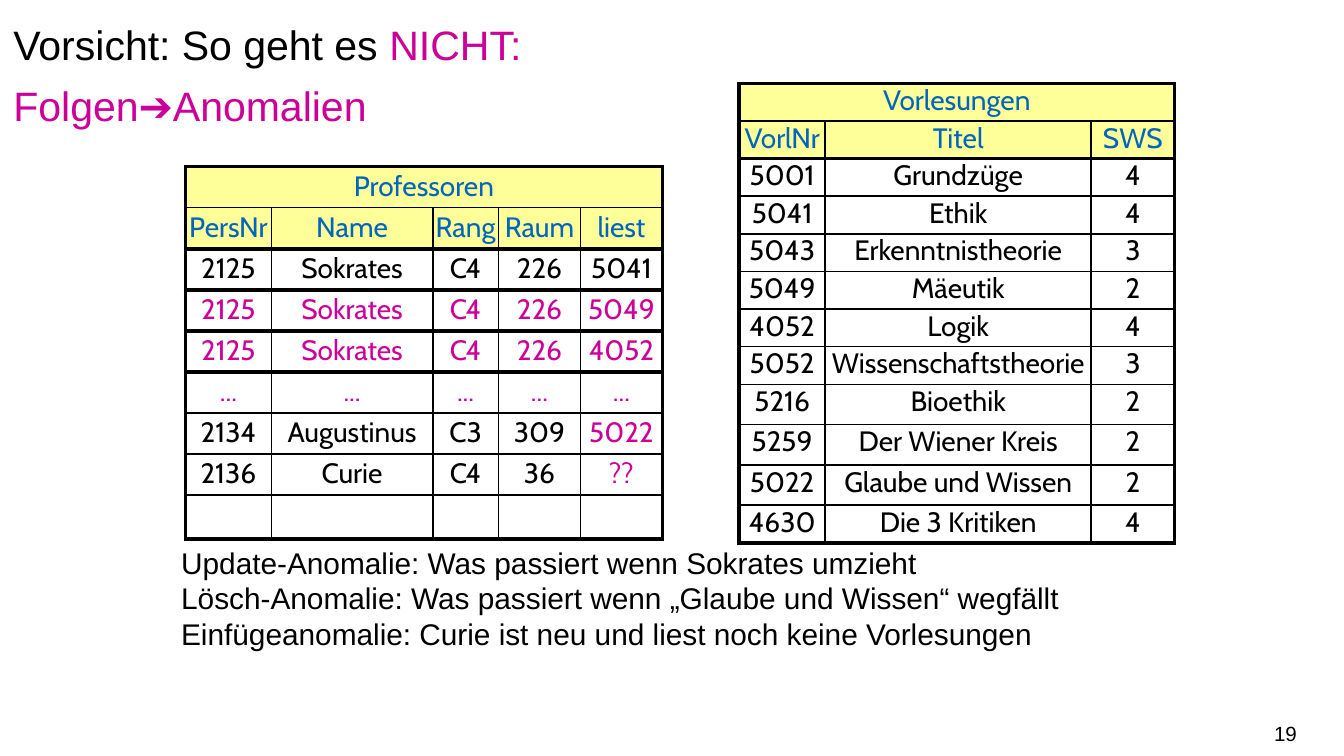
from lxml import etree
from pptx import Presentation
from pptx.dml.color import RGBColor
from pptx.enum.text import MSO_ANCHOR, MSO_AUTO_SIZE, PP_ALIGN
from pptx.oxml import parse_xml
from pptx.oxml.ns import nsdecls, qn
from pptx.util import Inches, Pt

TOP, MIDDLE = MSO_ANCHOR.TOP, MSO_ANCHOR.MIDDLE
LEFT, CENTER, RIGHT = PP_ALIGN.LEFT, PP_ALIGN.CENTER, PP_ALIGN.RIGHT
NO_AUTOFIT = MSO_AUTO_SIZE.NONE

BLACK = RGBColor(0x00, 0x00, 0x00)
MAGENTA = RGBColor(0xCC, 0x00, 0x99)
BLUE = RGBColor(0x00, 0x65, 0xBD)
YELLOW = RGBColor(0xFF, 0xFF, 0x99)

BODY_FONT, TABLE_FONT = "Arial", "Cabin"
TABLE_SIZE = 15
HEAVY, THIN = Pt(2.25), Pt(1)
HEADER_ROWS = 2

PROFESSORS = [
    ["Professoren"],
    ["PersNr", "Name", "Rang", "Raum", "liest"],
    ["2125", "Sokrates", "C4", "226", "5041"],
    ["2125", "Sokrates", "C4", "226", "5049"],
    ["2125", "Sokrates", "C4", "226", "4052"],
    ["..."] * 5,
    ["2134", "Augustinus", "C3", "309", "5022"],
    ["2136", "Curie", "C4", "36", "??"],
    [""] * 5,
]
LECTURES = [
    ["Vorlesungen"],
    ["VorlNr", "Titel", "SWS"],
    ["5001", "Grundzüge", "4"],
    ["5041", "Ethik", "4"],
    ["5043", "Erkenntnistheorie", "3"],
    ["5049", "Mäeutik", "2"],
    ["4052", "Logik", "4"],
    ["5052", "Wissenschaftstheorie", "3"],
    ["5216", "Bioethik", "2"],
    ["5259", "Der Wiener Kreis", "2"],
    ["5022", "Glaube und Wissen", "2"],
    ["4630", "Die 3 Kritiken", "4"],
]
ANOMALIES = [
    "Update-Anomalie: Was passiert wenn Sokrates umzieht",
    "Lösch-Anomalie: Was passiert wenn „Glaube und Wissen“ wegfällt",
    "Einfügeanomalie: Curie ist neu und liest noch keine Vorlesungen",
]


def place(shape, left, top, width, height):
    shape.left, shape.top = Inches(left), Inches(top)
    shape.width, shape.height = Inches(width), Inches(height)


def add_span(para, text, size, color, font=BODY_FONT):
    span = para.add_run()
    span.text = text
    span.font.name = font
    span.font.size = Pt(size)
    span.font.color.rgb = color


def fill_title(page):
    title = page.shapes.title
    place(title, 0, 0, 10, 0.94)
    frame = title.text_frame
    frame.auto_size = NO_AUTOFIT
    frame.vertical_anchor = TOP
    para = frame.paragraphs[0]
    para.alignment = LEFT
    para.line_spacing = 1.25
    add_span(para, "Vorsicht: So geht es ", 22, BLACK)
    add_span(para, "NICHT:", 22, MAGENTA)
    para.add_line_break()
    add_span(para, "Folgen➔Anomalien", 22, MAGENTA)


def add_text(page, bounds, lines, size, alignment=LEFT, anchor=TOP, side_inset=0.1):
    box = page.shapes.add_textbox(*map(Inches, bounds))
    frame = box.text_frame
    frame.word_wrap = True
    frame.vertical_anchor = anchor
    frame.margin_left = frame.margin_right = Inches(side_inset)
    for index, line in enumerate(lines):
        para = frame.add_paragraph() if index else frame.paragraphs[0]
        para.alignment = alignment
        add_span(para, line, size, BLACK)


def set_borders(cell, borders):
    properties = cell._tc.get_or_add_tcPr()
    for index, (side, width) in enumerate(borders):
        line = parse_xml(
            f'<a:ln{side} {nsdecls("a")} w="{width}"><a:solidFill>'
            f'<a:srgbClr val="{BLACK}"/></a:solidFill></a:ln{side}>'
        )
        properties.insert(index, line)


def fill_cell(cell, text, color, spacing):
    cell.margin_left = cell.margin_right = 0
    cell.margin_top = cell.margin_bottom = Inches(0.04)
    para = cell.text_frame.paragraphs[0]
    para.alignment = CENTER
    if text:
        para.line_spacing = spacing
        add_span(para, text, TABLE_SIZE, color, TABLE_FONT)
    else:
        etree.SubElement(para._p, qn("a:endParaRPr"), sz=str(TABLE_SIZE * 100))


def add_relation(page, left, top, widths, heights, rows, spacing, heavy_lines, marked=()):
    bounds = map(Inches, (left, top, sum(widths), sum(heights)))
    table = page.shapes.add_table(len(rows), len(widths), *bounds).table
    table.first_row = table.horz_banding = False
    for column, width in zip(table.columns, widths):
        column.width = Inches(width)
    for row, height in zip(table.rows, heights):
        row.height = Inches(height)
    last = len(widths)
    table.cell(0, 0).merge(table.cell(0, last - 1))

    for r, row in enumerate(rows):
        for c in range(last):
            cell = table.cell(r, c)
            if r < HEADER_ROWS:
                cell.fill.solid()
                cell.fill.fore_color.rgb = YELLOW
                color = BLUE
            else:
                cell.fill.background()
                color = MAGENTA if (r, c) in marked else BLACK
            if not cell.is_spanned:
                fill_cell(cell, row[c], color, spacing)
            right = c + (cell.span_width if cell.is_merge_origin else 1)
            borders = [
                (side, HEAVY if edge in (0, last) else THIN)
                for side, edge in (("L", c), ("R", right))
                if r or edge in (0, last)
            ]
            borders += [
                (side, HEAVY if edge in heavy_lines else THIN)
                for side, edge in (("T", r), ("B", r + 1))
            ]
            set_borders(cell, borders)


def main():
    deck = Presentation()
    deck.slide_width, deck.slide_height = Inches(10), Inches(10 * 9 / 16)
    page = deck.slides.add_slide(deck.slide_layouts[5])
    fill_title(page)
    add_text(page, (1.25, 4, 7.5, 1.62), ANOMALIES, 16)

    marked = {(r, c) for r in (3, 4, 5) for c in range(5)} | {(6, 4), (7, 4)}
    add_relation(page, 1.38, 1.24, [0.64, 1.2, 0.49, 0.61, 0.61], [0.3] * 9,
                 PROFESSORS, 0.9, {0, 2, 3, 4, 5, 9}, marked)

    tall = 0.3
    short = (3.38 - 3 * tall) / 9
    add_relation(page, 5.5, 0.62, [0.64, 1.98, 0.62], [short] * 8 + [tall] * 3 + [short],
                 LECTURES, 0.8, {0, 2, 12})

    add_text(page, (7.41, 5.31, 2.24, 0.3), ["19"], 11, RIGHT, MIDDLE, 0)
    deck.save("out.pptx")


if __name__ == "__main__":
    main()
